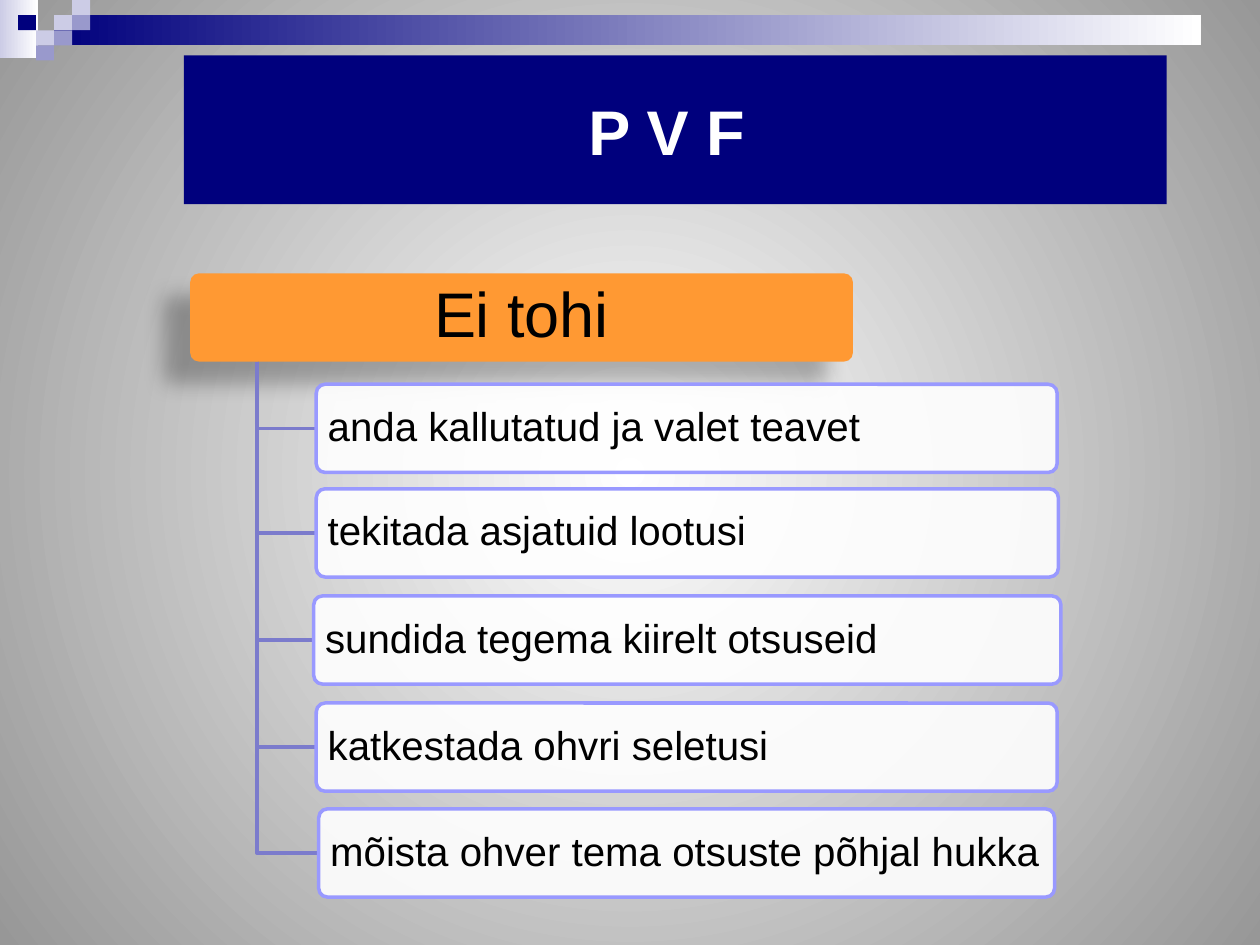
"""Build the PVF slide: a header banner and a tree of five things not to do."""
from lxml.etree import SubElement
from pptx import Presentation
from pptx.dml.color import RGBColor
from pptx.enum.shapes import MSO_SHAPE
from pptx.enum.text import MSO_ANCHOR as Anchor, PP_ALIGN as Align
from pptx.oxml.ns import qn
from pptx.util import Inches, Pt

NAVY = RGBColor(0x00, 0x00, 0x7D)
WHITE = RGBColor(0xFF, 0xFF, 0xFF)
BLACK = RGBColor(0x00, 0x00, 0x00)
GREY = RGBColor(0x97, 0x97, 0x97)
LAVENDER = RGBColor(0xCC, 0xCC, 0xE6)
PERIWINKLE = RGBColor(0x99, 0x99, 0xCC)
ORANGE = RGBColor(0xFF, 0x99, 0x33)
BORDER = RGBColor(0x99, 0x99, 0xFF)
BRANCH = RGBColor(0x7B, 0x7B, 0xCC)

TILE_WIDTH, TILE_HEIGHT = 0.143, 0.12
TILES = [
    (3, 1, LAVENDER), (4, 0, LAVENDER), (4, 1, PERIWINKLE), (2, 2, LAVENDER),
    (1, 1, NAVY), (3, 2, PERIWINKLE), (2, 3, PERIWINKLE),
]
BOX_HEIGHT = 0.7
TRUNK_X, TRUNK_TOP = 2.04, 2.87
ITEMS = [
    ("anda kallutatud ja valet teavet", 2.51, 3.05, 5.88),
    ("tekitada asjatuid lootusi", 2.51, 3.88, 5.89),
    ("sundida tegema kiirelt otsuseid", 2.49, 4.73, 5.93),
    ("katkestada ohvri seletusi", 2.51, 5.58, 5.88),
    ("mõista ohver tema otsuste põhjal hukka", 2.53, 6.42, 5.84),
]


def write_text(shape, text, size=23, color=BLACK, bold=False, align=Align.LEFT,
               spacing=0.9, inset=(0.07, 0.05)):
    frame = shape.text_frame
    frame.word_wrap = True
    frame.vertical_anchor = Anchor.MIDDLE
    frame.margin_left = frame.margin_right = Inches(inset[0])
    frame.margin_top = frame.margin_bottom = Inches(inset[1])
    paragraph = frame.paragraphs[0]
    paragraph.alignment = align
    paragraph.line_spacing = spacing
    run = paragraph.add_run()
    run.text = text
    run.font.name = "Arial"
    run.font.size = Pt(size)
    run.font.bold = bold
    run.font.color.rgb = color


class SlideBuilder:
    def __init__(self, slide, line_width=2):
        self.slide = slide
        self.line_width = Pt(line_width)

    def gradient(self, fill, start, end):
        fill.gradient()
        for stop, color in zip(fill.gradient_stops, (start, end)):
            stop.color.rgb = color

    def background(self, center, edge):
        self.gradient(self.slide.background.fill, center, edge)
        gradient = self.slide.element.find(".//" + qn("a:gradFill"))
        gradient.remove(gradient.find(qn("a:lin")))
        circle = SubElement(gradient, qn("a:path"), path="circle")
        SubElement(circle, qn("a:fillToRect"), l="50000", t="50000", r="50000", b="50000")

    def box(self, left, top, width, height, fill, kind=MSO_SHAPE.RECTANGLE):
        shape = self.slide.shapes.add_shape(
            kind, Inches(left), Inches(top), Inches(width), Inches(height))
        shape.shadow.inherit = False
        shape.fill.solid()
        shape.fill.fore_color.rgb = fill
        shape.line.fill.background()
        return shape

    def gradient_bar(self, left, top, width, height, start, end):
        shape = self.box(left, top, width, height, start)
        self.gradient(shape.fill, start, end)
        shape.fill.gradient_angle = 0

    def rounded_box(self, left, top, width, fill):
        shape = self.box(left, top, width, BOX_HEIGHT, fill, MSO_SHAPE.ROUNDED_RECTANGLE)
        shape.adjustments[0] = 0.1
        return shape

    def heading(self, text, left, top, width):
        shape = self.rounded_box(left, top, width, ORANGE)
        effects = shape.element.spPr.find(qn("a:effectLst"))
        shadow = SubElement(effects, qn("a:outerShdw"), blurRad=str(Pt(11.8)),
                            dist=str(Pt(19.7)), dir="8460000", rotWithShape="0")
        color = SubElement(shadow, qn("a:srgbClr"), val=str(BLACK))
        SubElement(color, qn("a:alpha"), val="28000")
        write_text(shape, text, size=36, align=Align.CENTER, inset=(0.09, 0.07))

    def item(self, text, left, top, width):
        shape = self.rounded_box(left, top, width, WHITE)
        color = shape.element.spPr.find(qn("a:solidFill"))[0]
        SubElement(color, qn("a:alpha"), val="90000")
        shape.line.color.rgb = BORDER
        shape.line.width = self.line_width
        write_text(shape, text, inset=(0.07, 0.05))

    def branch(self, end_x, end_y):
        builder = self.slide.shapes.build_freeform(Inches(TRUNK_X), Inches(TRUNK_TOP))
        builder.add_line_segments(
            [(Inches(TRUNK_X), Inches(end_y)), (Inches(end_x), Inches(end_y))], close=False)
        shape = builder.convert_to_shape()
        shape.shadow.inherit = False
        shape.fill.background()
        shape.line.color.rgb = BRANCH
        shape.line.width = self.line_width


def main():
    presentation = Presentation()
    presentation.slide_width, presentation.slide_height = Inches(10), Inches(7.5)
    builder = SlideBuilder(presentation.slides.add_slide(presentation.slide_layouts[6]))
    builder.background(WHITE, GREY)

    builder.gradient_bar(0, 0, 0.3, 0.46, LAVENDER, WHITE)
    builder.gradient_bar(0.43, 0.12, 9.1, 0.24, NAVY, WHITE)
    for column, row, color in TILES:
        builder.box(column * TILE_WIDTH, row * TILE_HEIGHT, TILE_WIDTH, TILE_HEIGHT, color)

    title = builder.box(1.46, 0.44, 7.8, 1.18, NAVY)
    write_text(title, "P V F ", size=36, color=WHITE, bold=True, align=Align.CENTER, spacing=1.0)

    builder.heading("Ei tohi", 1.51, 2.17, 5.26)
    for text, left, top, width in ITEMS:
        builder.branch(left, top + BOX_HEIGHT / 2)
        builder.item(text, left, top, width)

    presentation.save("out.pptx")


if __name__ == "__main__":
    main()
